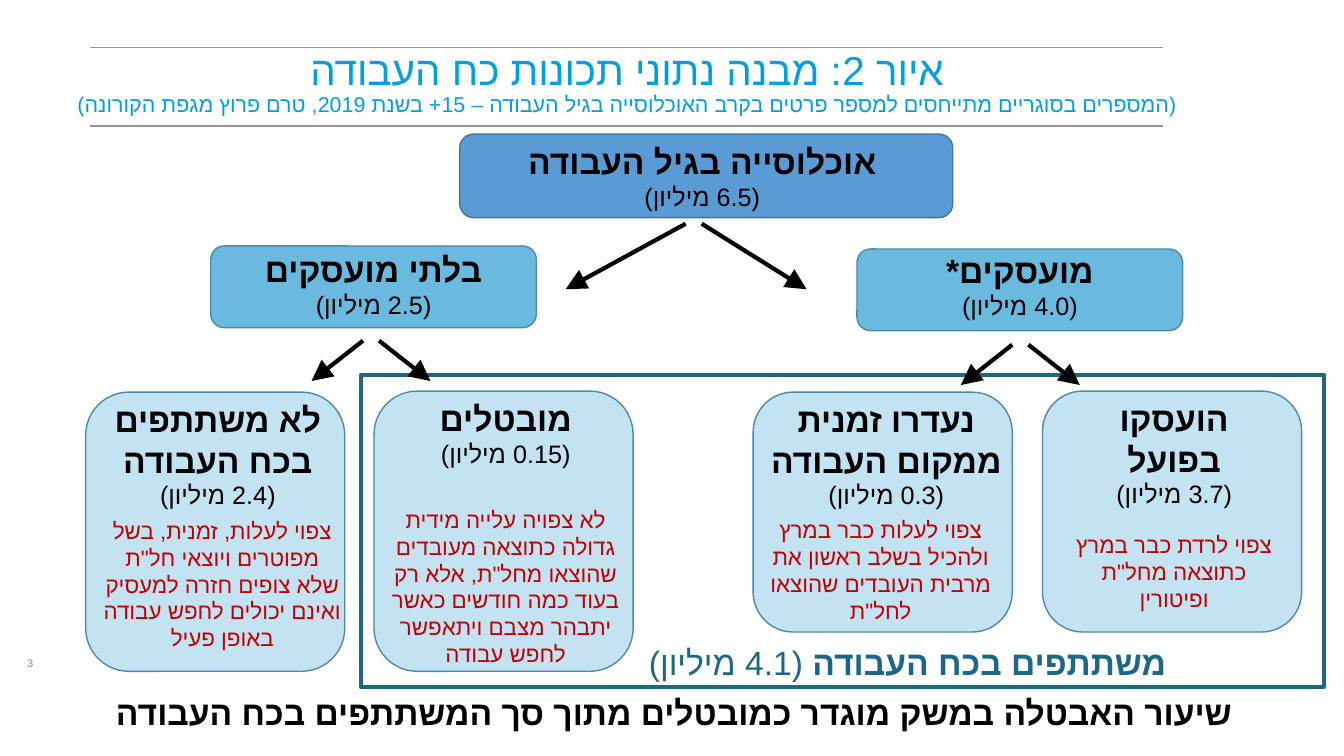
from dataclasses import dataclass

from lxml import etree
from pptx import Presentation
from pptx.dml.color import RGBColor
from pptx.enum.lang import MSO_LANGUAGE_ID as LANG
from pptx.enum.shapes import MSO_CONNECTOR, MSO_SHAPE
from pptx.enum.text import MSO_ANCHOR, MSO_AUTO_SIZE, PP_ALIGN
from pptx.oxml.ns import qn
from pptx.util import Inches, Pt


@dataclass(frozen=True)
class Theme:
    title_font: str = "Roboto"
    body_font: str = "Karla"
    hebrew_font: str = "Arial"
    title: str = "009FDF"
    black: str = "000000"
    note: str = "C00000"
    frame: str = "1D6686"
    rule: str = "939598"
    page: str = "8C8C8C"
    root_fill: str = "5B9BD5"
    root_line: str = "43739E"
    branch_fill: str = "69BADE"
    leaf_fill: str = "C3E3F2"
    node_line: str = "4E8AA4"
    title_size: float = 28.8
    subtitle_size: float = 15.3
    heading_size: float = 24
    figure_size: float = 18
    note_size: float = 16
    page_size: float = 7.9


THEME = Theme()


# Basic parts
def add_run(paragraph, text, size, color=THEME.black, bold=False, font=THEME.body_font):
    run = paragraph.add_run()
    run.text = text
    run.font.name = font
    run.font.size = Pt(size)
    run.font.bold = bold
    run.font.color.rgb = RGBColor.from_string(color)
    run.font.language_id = LANG.HEBREW
    etree.SubElement(run.font._element, qn("a:cs"), typeface=THEME.hebrew_font)


def rtl_paragraph(frame, first=False, align=PP_ALIGN.CENTER):
    paragraph = frame.paragraphs[0] if first else frame.add_paragraph()
    paragraph.alignment = align
    paragraph._p.get_or_add_pPr().set("rtl", "1")
    return paragraph


def text_frame(slide, box, middle=False):
    frame = slide.shapes.add_textbox(*map(Inches, box)).text_frame
    frame.word_wrap = True
    if middle:
        frame.vertical_anchor = MSO_ANCHOR.MIDDLE
    else:
        frame.auto_size = MSO_AUTO_SIZE.SHAPE_TO_FIT_TEXT
    return frame


def add_panel(slide, box, fill, line, width=1, kind=MSO_SHAPE.ROUNDED_RECTANGLE):
    panel = slide.shapes.add_shape(kind, *map(Inches, box))
    panel.shadow.inherit = False
    if fill:
        panel.fill.solid()
        panel.fill.fore_color.rgb = RGBColor.from_string(fill)
    else:
        panel.fill.background()
    panel.line.color.rgb = RGBColor.from_string(line)
    panel.line.width = Pt(width)


def add_line(slide, start, end, color, width, arrow=False):
    line = slide.shapes.add_connector(MSO_CONNECTOR.STRAIGHT, *map(Inches, start + end))
    line.line.color.rgb = RGBColor.from_string(color)
    line.line.width = Pt(width)
    if arrow:
        etree.SubElement(line.line._get_or_add_ln(), qn("a:tailEnd"),
                         type="triangle", w="lg", len="lg")
    etree.SubElement(line._element.spPr, qn("a:effectLst"))


# Regions
def add_title(slide, box, title, subtitle):
    left, top, width, height = box
    for y in (top + 0.03, top + 0.81):
        add_line(slide, (left + 0.52, y), (left + 11.16, y), THEME.rule, 0.75)
    paragraph = rtl_paragraph(text_frame(slide, box, middle=True), first=True)
    paragraph.line_spacing = 0.9
    add_run(paragraph, title, THEME.title_size, THEME.title, font=THEME.title_font)
    paragraph.add_line_break()
    add_run(paragraph, subtitle, THEME.subtitle_size, THEME.title, font=THEME.title_font)


def add_label(slide, box, heading, figure):
    frame = text_frame(slide, box)
    add_run(rtl_paragraph(frame, first=True), heading, THEME.heading_size, bold=True)
    add_run(rtl_paragraph(frame), figure, THEME.figure_size)


def add_node(slide, box, label_shift, fill, line, heading, figure):
    left, top, width, height = box
    dx, dy = label_shift
    add_panel(slide, box, fill, line)
    add_label(slide, (left + dx, top + dy, width, 0.81), heading, figure)


def add_leaf(slide, box, label, note_box, heading, figure, note):
    left, top, width, height = box
    label_dx, label_width, label_height = label
    note_dx, note_dy, note_width, note_height = note_box
    add_panel(slide, box, THEME.leaf_fill, THEME.node_line)
    add_label(slide, (left + label_dx, top + 0.02, label_width, label_height), heading, figure)
    frame = text_frame(slide, (left + note_dx, top + note_dy, note_width, note_height))
    add_run(rtl_paragraph(frame, first=True), note, THEME.note_size, THEME.note)


def add_split(slide, center, top, drop, left_reach, right_reach):
    for start, end in ((-0.08, -left_reach), (0.08, right_reach)):
        add_line(slide, (center + start, top), (center + end, top + drop),
                 THEME.black, 3, arrow=True)


def add_labour_force(slide, box, name, figure):
    left, top, width, height = box
    add_panel(slide, box, None, THEME.frame, 3, MSO_SHAPE.RECTANGLE)
    frame = text_frame(slide, (left + 1.71, top + height - 0.5, 7.42, 0.5))
    paragraph = rtl_paragraph(frame, first=True)
    add_run(paragraph, name, THEME.heading_size, THEME.frame, bold=True)
    add_run(paragraph, figure, THEME.heading_size, THEME.frame)


def add_footer(slide, box, conclusion, page):
    left, top, width, height = box
    frame = text_frame(slide, box)
    add_run(rtl_paragraph(frame, first=True), conclusion, THEME.heading_size, bold=True)
    number = text_frame(slide, (left - 0.47, top - 0.44, 0.53, 0.4), middle=True)
    add_run(rtl_paragraph(number, first=True, align=PP_ALIGN.LEFT), page,
            THEME.page_size, THEME.page)


# Leaves: box, label (shift, width, height), note box within the leaf, wording
LEAVES = [
    ((10.34, 3.88, 2.57, 2.39), (0.23, 2.15, 1.21), (0.21, 1.34, 2.19, 0.91),
     "הועסקו בפועל", "(3.7 מיליון)",
     "צפוי לרדת כבר במרץ כתוצאה מחל\"ת ופיטורין"),
    ((7.47, 3.89, 2.57, 2.38), (0.05, 2.54, 1.21), (-0.02, 1.18, 2.57, 1.18),
     "נעדרו זמנית ממקום העבודה", "(0.3 מיליון)",
     "צפוי לעלות כבר במרץ ולהכיל בשלב ראשון את מרבית העובדים שהוצאו לחל\"ת"),
    ((3.71, 3.88, 2.57, 2.78), (0.23, 2.15, 0.81), (0.02, 1.09, 2.57, 1.72),
     "מובטלים", "(0.15 מיליון)",
     "לא צפויה עלייה מידית גדולה כתוצאה מעובדים שהוצאו מחל\"ת, אלא רק "
     "בעוד כמה חודשים כאשר יתבהר מצבם ויתאפשר לחפש עבודה"),
    ((0.85, 3.89, 2.57, 2.77), (0.04, 2.54, 1.21), (0.07, 1.19, 2.57, 1.45),
     "לא משתתפים בכח העבודה", "(2.4 מיליון)",
     "צפוי לעלות, זמנית, בשל מפוטרים ויוצאי חל\"ת שלא צופים חזרה למעסיק "
     "ואינם יכולים לחפש עבודה באופן פעיל"),
]


def main():
    deck = Presentation()
    deck.slide_width, deck.slide_height = Inches(13.33), Inches(7.5)
    slide = deck.slides.add_slide(deck.slide_layouts[6])

    add_title(slide, (0.37, 0.44, 11.7, 0.78), "איור 2: מבנה נתוני תכונות כח העבודה",
              "(המספרים בסוגריים מתייחסים למספר פרטים בקרב האוכלוסייה בגיל העבודה – 15+ "
              "בשנת 2019, טרם פרוץ מגפת הקורונה)")
    add_labour_force(slide, (3.58, 3.72, 9.55, 3.1), "משתתפים בכח העבודה ", "(4.1 מיליון)")

    # Population and its two branches
    add_node(slide, (4.56, 1.33, 4.89, 0.83), (-0.04, 0.02), THEME.root_fill,
             THEME.root_line, "אוכלוסייה בגיל העבודה", "(6.5 מיליון)")
    add_node(slide, (8.5, 2.47, 3.23, 0.81), (0, -0.04), THEME.branch_fill,
             THEME.node_line, "מועסקים*", "(4.0 מיליון)")
    add_node(slide, (2.09, 2.44, 3.23, 0.81), (0, -0.02), THEME.branch_fill,
             THEME.node_line, "בלתי מועסקים", "(2.5 מיליון)")
    for leaf in LEAVES:
        add_leaf(slide, *leaf)

    # Arrows between the levels
    add_split(slide, 6.88, 2.22, 0.65, 1.27, 1.12)
    add_split(slide, 10.12, 3.42, 0.4, 0.59, 0.59)
    add_split(slide, 3.68, 3.38, 0.4, 0.59, 0.59)

    add_footer(slide, (0.64, 6.82, 12.09, 0.5),
               "שיעור האבטלה במשק מוגדר כמובטלים מתוך סך המשתתפים בכח העבודה", "3")
    deck.save("out.pptx")


if __name__ == "__main__":
    main()
